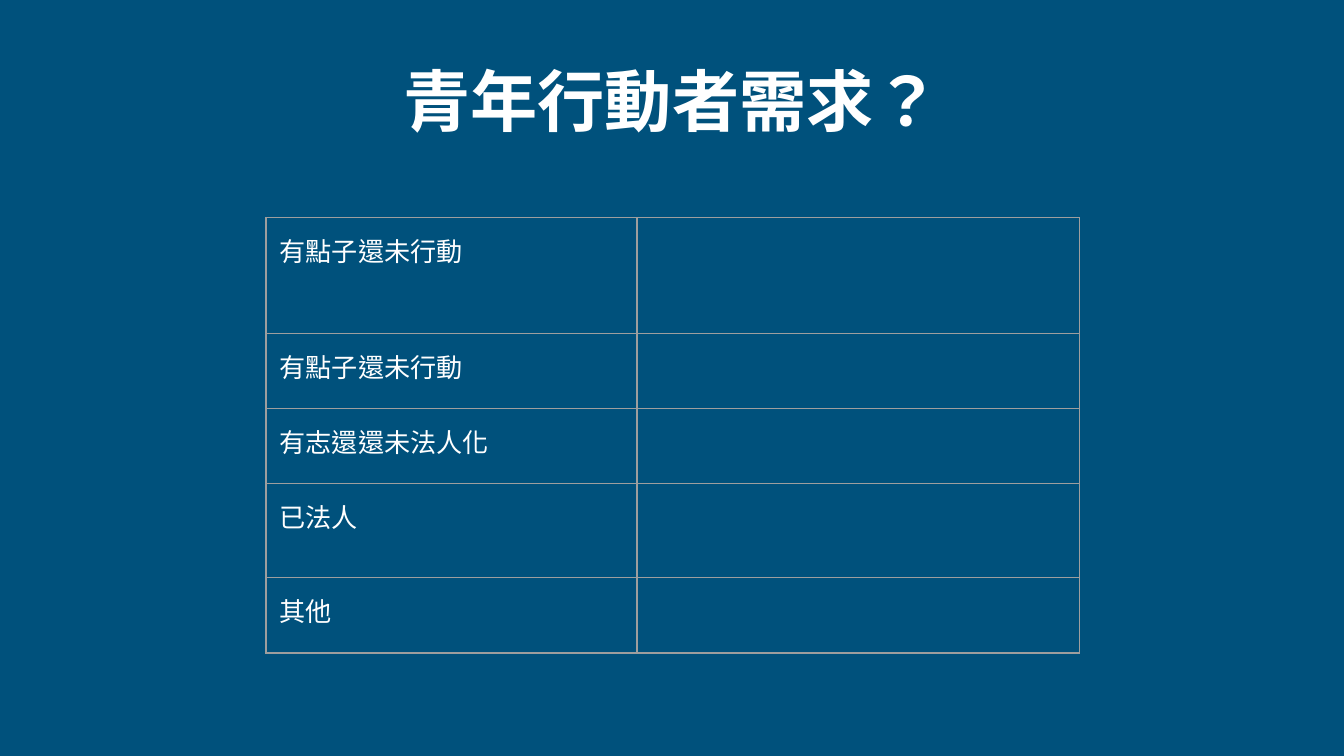
from pptx import Presentation
from pptx.dml.color import RGBColor
from pptx.enum.text import MSO_ANCHOR as Anchor, PP_ALIGN as Align
from pptx.oxml.ns import qn
from pptx.util import Inches, Pt
from lxml.etree import SubElement as Sub

# Content
TITLE = "青年行動者需求？"
ROWS = [
    ("有點子還未行動", 0.86),
    ("有點子還未行動", 0.56),
    ("有志還還未法人化", 0.56),
    ("已法人", 0.7),
    ("其他", 0.56),
]
COLS = [2.76, 3.29]
BACK, INK, RULE = "00517C", "FFFFFF", "9E9E9E"
FONT, LANG = "Arial", "zh-TW"


def paint(fill, color):
    fill.solid()
    fill.fore_color.rgb = RGBColor.from_string(color)


def write(para, text, size, bold=False):
    run = para.add_run()
    run.text = text
    font = run.font
    font.name, font.size, font.bold = FONT, Pt(size), bold
    paint(font.fill, INK)
    # The language gives the full-width question mark its shape
    run._r.get_or_add_rPr().set("lang", LANG)


def pad(box):
    box.margin_left = box.margin_right = Inches(0.1)
    box.margin_top = box.margin_bottom = Inches(0.1)


def rule(cell):
    """Draw the four cell borders, then leave the cell unfilled."""
    props = cell._tc.get_or_add_tcPr()
    for side in ("lnL", "lnR", "lnT", "lnB"):
        line = Sub(props, qn(f"a:{side}"), w=str(Pt(0.75)))
        fill = Sub(line, qn("a:solidFill"))
        Sub(fill, qn("a:srgbClr"), val=RULE)
    cell.fill.background()


# Slide, 16:9
deck = Presentation()
deck.slide_width, deck.slide_height = Inches(10), Inches(10 * 9 / 16)
slide = deck.slides.add_slide(deck.slide_layouts[5])
paint(slide.background.fill, BACK)

# Title
title = slide.shapes.title
title.left, title.top = Inches(2.03), Inches(0.34)
title.width, title.height = Inches(5.94), Inches(0.81)
frame = title.text_frame
frame.word_wrap = True
frame.vertical_anchor = Anchor.MIDDLE
pad(frame)
frame.paragraphs[0].alignment = Align.CENTER
write(frame.paragraphs[0], TITLE, 36, True)

# Table of needs
high = sum(size for _, size in ROWS)
table = slide.shapes.add_table(
    len(ROWS), len(COLS), Inches(1.98), Inches(1.62),
    Inches(sum(COLS)), Inches(high)).table
table.first_row = table.horz_banding = False
for col, wide in zip(table.columns, COLS):
    col.width = Inches(wide)
for row, (label, size) in zip(table.rows, ROWS):
    row.height = Inches(size)
    for cell in row.cells:
        pad(cell)
        rule(cell)
    write(row.cells[0].text_frame.paragraphs[0], label, 14)

deck.save("out.pptx")
